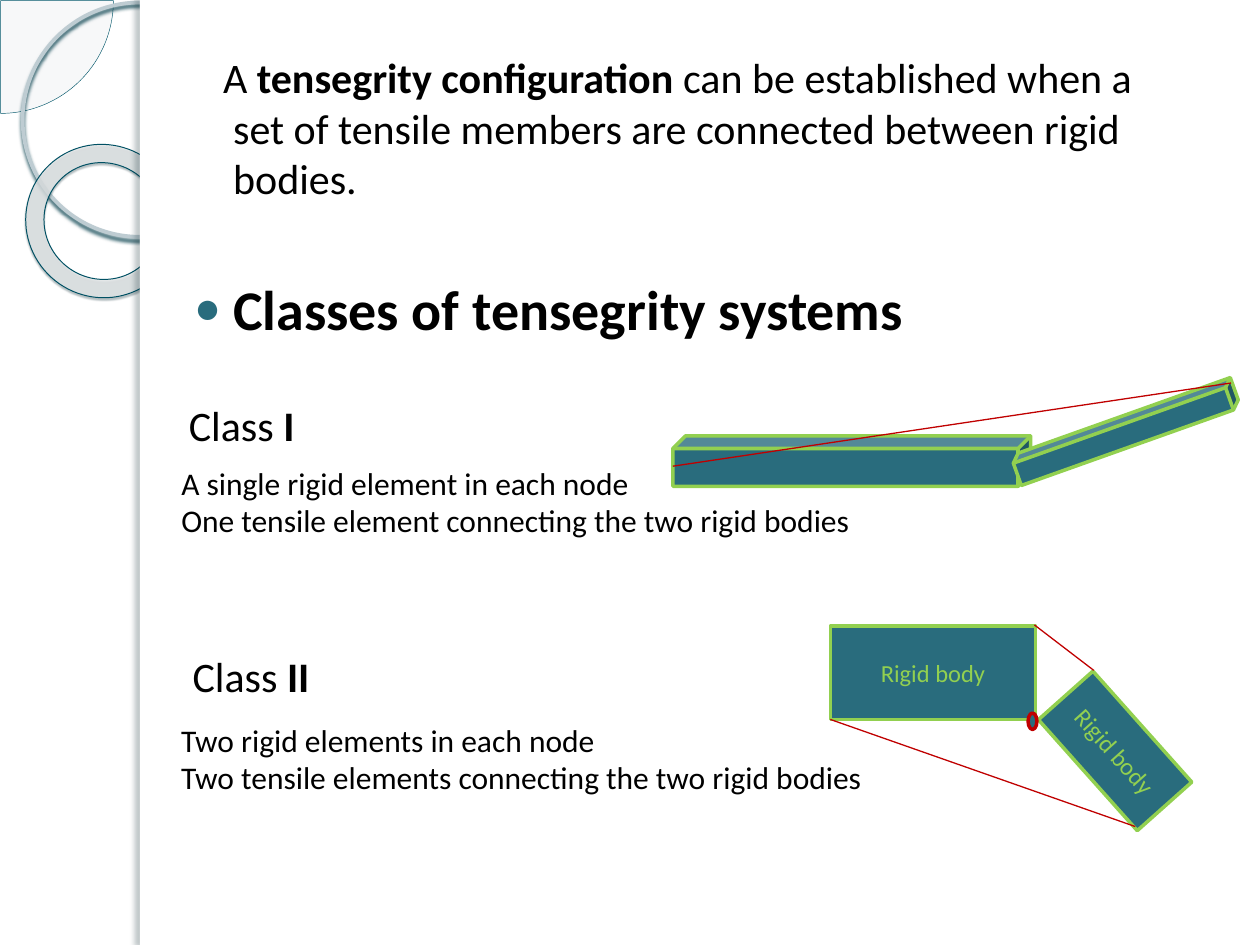
from lxml.etree import SubElement
from pptx import Presentation
from pptx.dml.color import RGBColor
from pptx.enum.shapes import MSO_CONNECTOR, MSO_SHAPE
from pptx.enum.text import MSO_ANCHOR, MSO_AUTO_SIZE, PP_ALIGN
from pptx.oxml.ns import qn
from pptx.util import Inches, Pt

COLORS = {
    "white": "FFFFFF",
    "text": "000000",
    "body": "296C7D",
    "edge": "92D050",
    "cable": "C00000",
    "pie": "E9ECED",
    "pie_edge": "005569",
    "ring": "BECCD2",
    "ring_shadow": "0B4350",
    "donut": "E2E5E6",
    "donut_edge": "005063",
    "donut_shadow": "00252D",
    "panel_shadow": "0D2930",
}
FONT = "Calibri"


def rgb(name):
    return RGBColor.from_string(COLORS[name])


def add_alpha(color_element, percent):
    SubElement(color_element, qn("a:alpha"), val=str(percent * 1000))


def add_figure(slide, preset, box, fill=None, edge=None, width=2, rotation=0, alpha=None):
    figure = slide.shapes.add_shape(preset, *map(Inches, box))
    figure.rotation = rotation
    figure.shadow.inherit = False
    if fill:
        figure.fill.solid()
        figure.fill.fore_color.rgb = rgb(fill)
        if alpha:
            add_alpha(figure._element.spPr.find(".//" + qn("a:srgbClr")), alpha)
    else:
        figure.fill.background()
    if edge:
        figure.line.color.rgb = rgb(edge)
        figure.line.width = Pt(width)
    else:
        figure.line.fill.background()
    return figure


def add_shadow(figure, color, alpha, blur, distance, angle):
    effects = figure._element.spPr.find(qn("a:effectLst"))
    shadow = SubElement(
        effects, qn("a:outerShdw"), blurRad=str(Pt(blur)), dist=str(Pt(distance)),
        dir=str(angle * 60000), algn="ctr", rotWithShape="0",
    )
    add_alpha(SubElement(shadow, qn("a:srgbClr"), val=COLORS[color]), alpha)


def add_run(paragraph, text, size, bold=False, color="text"):
    run = paragraph.add_run()
    run.text = text
    run.font.name = FONT
    run.font.size = Pt(size)
    run.font.bold = bold
    run.font.color.rgb = rgb(color)


def add_label(slide, box, size, paragraphs):
    label = slide.shapes.add_textbox(*map(Inches, box))
    frame = label.text_frame
    frame.word_wrap = False
    frame.auto_size = MSO_AUTO_SIZE.SHAPE_TO_FIT_TEXT
    for index, runs in enumerate(paragraphs):
        paragraph = frame.add_paragraph() if index else frame.paragraphs[0]
        for text, bold in runs:
            add_run(paragraph, text, size, bold)


def add_class(slide, numeral, heading_box, facts_box, facts):
    add_label(slide, heading_box, 24, [[("Class ", False), (numeral, True)]])
    add_label(slide, facts_box, 18, [[(fact, False)] for fact in facts])


def add_rigid_body(slide, preset, box, rotation=0, caption=None):
    body = add_figure(slide, preset, box, "body", "edge", rotation=rotation)
    if caption:
        frame = body.text_frame
        frame.vertical_anchor = MSO_ANCHOR.MIDDLE
        frame.paragraphs[0].alignment = PP_ALIGN.CENTER
        add_run(frame.paragraphs[0], caption, 14, color="edge")


def add_cable(slide, start, end):
    cable = slide.shapes.add_connector(MSO_CONNECTOR.STRAIGHT, *map(Inches, start + end))
    cable.line.color.rgb = rgb("cable")
    cable.line.width = Pt(0.75)
    SubElement(cable._element.spPr, qn("a:effectLst"))


def add_side_ornament(slide):
    quarter = add_figure(slide, MSO_SHAPE.PIE, (-0.89, -0.89, 1.79, 1.79),
                         "pie", "pie_edge", 0.25, alpha=33)
    quarter.adjustments[0] = 0
    quarter.adjustments[1] = 54
    ring = add_figure(slide, MSO_SHAPE.OVAL, (0.18, 0.02, 1.86, 1.86), edge="ring", width=2.15)
    add_shadow(ring, "ring_shadow", 85, 2, 2, 90)
    donut = add_figure(slide, MSO_SHAPE.DONUT, (0.2, 1.15, 1.23, 1.21),
                       "donut", "donut_edge", 0.58, 38.6, alpha=80)
    donut.adjustments[0] = 0.12
    add_shadow(donut, "donut_shadow", 35, 1, 1.2, 75)
    add_figure(slide, MSO_SHAPE.RECTANGLE, (1.11, 0, 8.89, 7.5), "white")
    panel_edge = add_figure(slide, MSO_SHAPE.RECTANGLE, (1.11, 0, 0.08, 7.5), "white")
    add_shadow(panel_edge, "panel_shadow", 25, 3, 3, 180)


def format_paragraph(paragraph, space_before, indent, bullet=None):
    paragraph.space_before = Pt(space_before)
    properties = paragraph._p.get_or_add_pPr()
    properties.set("marL", str(Inches(0.4)))
    properties.set("indent", str(Inches(indent)))
    if bullet:
        bullet_color = SubElement(properties, qn("a:buClr"))
        SubElement(bullet_color, qn("a:srgbClr"), val=COLORS["body"])
        SubElement(properties, qn("a:buSzPct"), val="80000")
        SubElement(properties, qn("a:buChar"), char=bullet)
    else:
        SubElement(properties, qn("a:buNone"))


def fill_definition(slide):
    title, content = slide.placeholders
    title._element.getparent().remove(title._element)
    content.left, content.top, content.width, content.height = map(Inches, (1.35, 0.36, 8.2, 5.25))
    tree = slide.shapes._spTree
    tree.remove(content._element)
    tree.append(content._element)
    frame = content.text_frame
    definition = frame.paragraphs[0]
    format_paragraph(definition, 6, -0.08)
    add_run(definition, "A ", 24)
    add_run(definition, "tensegrity configuration ", 24, True)
    add_run(definition, "can be established when a set of tensile members "
                        "are connected between rigid bodies.", 24)
    heading = frame.add_paragraph()
    format_paragraph(heading, 41, -0.31, "●")
    add_run(heading, "Classes of tensegrity systems", 32, True)


def main():
    deck = Presentation()
    deck.slide_width, deck.slide_height = Inches(10), Inches(7.5)
    slide = deck.slides.add_slide(deck.slide_layouts[1])
    add_side_ornament(slide)
    fill_definition(slide)

    add_rigid_body(slide, MSO_SHAPE.CUBE, (5.34, 3.46, 2.84, 0.4))
    add_rigid_body(slide, MSO_SHAPE.CUBE, (8.01, 3.3, 1.85, 0.25), 340.4)
    add_cable(slide, (5.34, 3.7), (9.77, 3.04))
    add_class(slide, "I", (1.4, 3.12, 1.12, 0.5), (1.34, 3.63, 5.58, 0.71),
              ["A single rigid element in each node",
               "One tensile element connecting the two rigid bodies"])

    add_class(slide, "II", (1.43, 5.11, 1.23, 0.5), (1.34, 5.67, 5.66, 0.71),
              ["Two rigid elements in each node",
               "Two tensile elements connecting the two rigid bodies"])
    add_rigid_body(slide, MSO_SHAPE.RECTANGLE, (6.59, 4.97, 1.63, 0.74), caption="Rigid body")
    add_rigid_body(slide, MSO_SHAPE.RECTANGLE, (8.26, 5.67, 1.18, 0.58), 48.3, "Rigid body")
    add_cable(slide, (6.59, 5.71), (9.01, 6.56))
    add_cable(slide, (8.21, 4.96), (8.68, 5.32))
    add_figure(slide, MSO_SHAPE.FLOWCHART_CONNECTOR, (8.16, 5.66, 0.07, 0.13), "body", "cable")

    deck.save("out.pptx")


if __name__ == "__main__":
    main()
